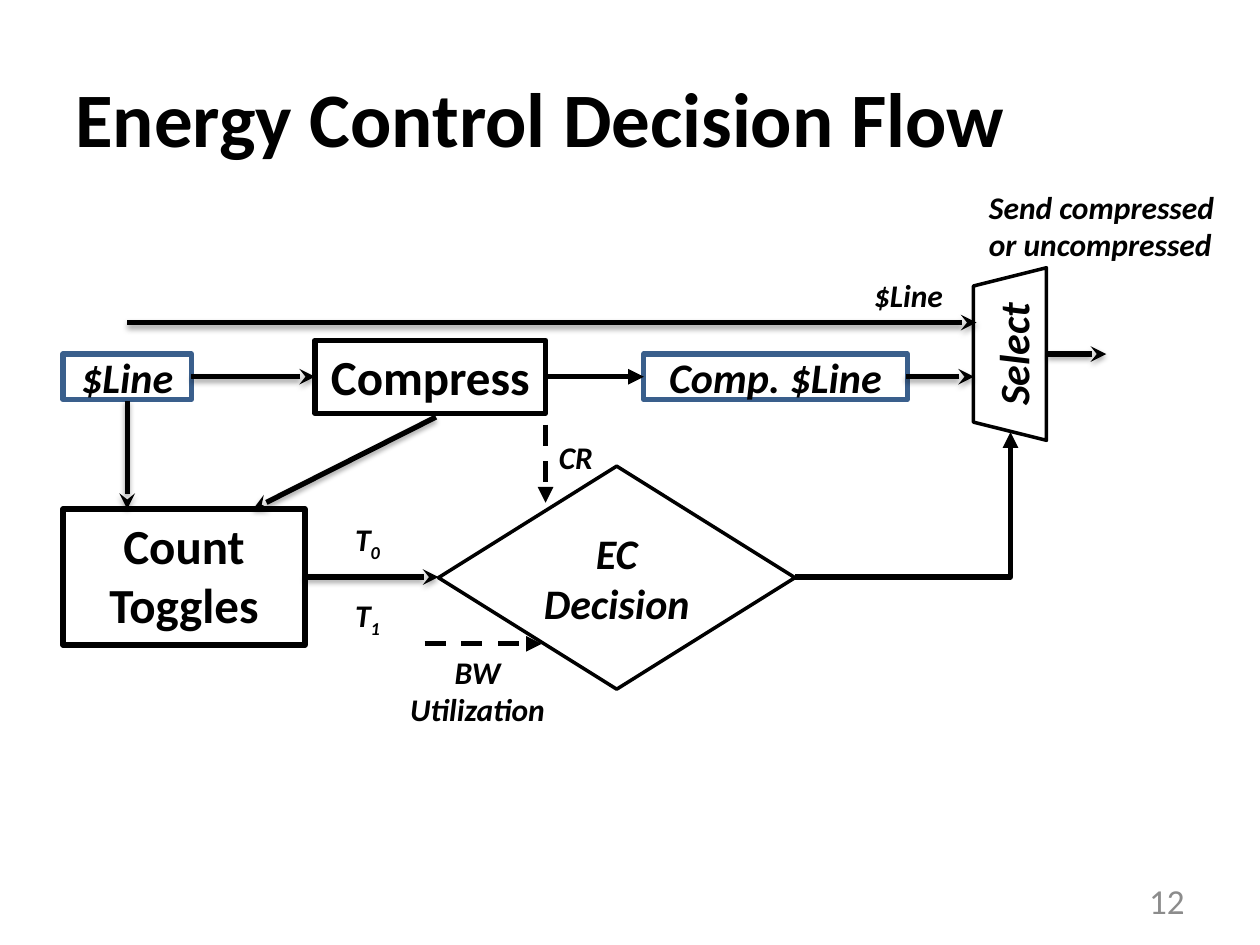
"""Build the energy control decision flow slide."""
from dataclasses import dataclass

from lxml import etree
from pptx import Presentation
from pptx import util as u
from pptx.dml.color import RGBColor
from pptx.enum import dml, shapes, text
from pptx.oxml import ns

COLORS = {"ink": "000000", "paper": "FFFFFF", "edge": "3A5F8C", "number": "8C8C8C"}
MIDDLE, TOP = text.MSO_ANCHOR.MIDDLE, text.MSO_ANCHOR.TOP
LEFT, CENTER, RIGHT = text.PP_ALIGN.LEFT, text.PP_ALIGN.CENTER, text.PP_ALIGN.RIGHT
RECT = shapes.MSO_SHAPE.RECTANGLE


@dataclass(frozen=True)
class Style:
    """Look of a piece of text."""
    size: int
    bold: bool = True
    italic: bool = False
    color: str = "ink"
    align: text.PP_ALIGN = CENTER
    anchor: text.MSO_ANCHOR = MIDDLE


TITLE = Style(44, align=LEFT)
NUMBER = Style(20, bold=False, color="number", align=RIGHT)
STEP = Style(28, anchor=TOP)
DATA = Style(24, italic=True)
LABEL = Style(18, italic=True, anchor=TOP)
LEFT_LABEL = Style(18, italic=True, align=LEFT, anchor=TOP)


@dataclass(frozen=True)
class Node:
    """Outlined shape with centred text."""
    lines: tuple[str, ...]
    box: tuple[float, float, float, float]
    style: Style = DATA
    kind: shapes.MSO_SHAPE = RECT
    fill: str | None = None
    edge: str = "ink"
    weight: float = 3
    rotation: float = 0


@dataclass(frozen=True)
class Label:
    """Free text, with an optional subscript after the last line."""
    lines: tuple[str, ...]
    box: tuple[float, float, float, float]
    style: Style = LABEL
    subscript: str = ""
    wrap: bool = False


@dataclass(frozen=True)
class Arrow:
    """Connector with a head at its end."""
    start: tuple[float, float]
    end: tuple[float, float]
    head: str = "stealth"
    dashed: bool = False
    bent: bool = False


NODES = [
    Node(("$Line",), (0.5, 2.81, 1.02, 0.36), edge="edge"),
    Node(("Compress",), (2.5, 2.7, 1.83, 0.58), STEP, fill="paper"),
    Node(("Comp. $Line",), (5.11, 2.81, 2.09, 0.36), edge="edge"),
    Node(("Count Toggles",), (0.5, 4.04, 1.92, 1.08), STEP, fill="paper"),
    Node(("Select",), (7.33, 2.52, 1.37, 0.58), kind=shapes.MSO_SHAPE.TRAPEZOID,
         weight=2, rotation=270),
    Node(("EC", "Decision"), (3.48, 3.7, 2.83, 1.77), kind=shapes.MSO_SHAPE.DIAMOND, weight=2),
]
ARROWS = [
    Arrow((1.52, 2.99), (2.5, 2.99)),
    Arrow((4.33, 2.99), (5.11, 2.99), "triangle"),
    Arrow((7.19, 2.99), (7.73, 2.99)),
    Arrow((1.01, 3.18), (1.01, 4.04)),
    Arrow((1.01, 2.56), (7.75, 2.56)),
    Arrow((3.46, 3.31), (2.01, 4.04)),
    Arrow((2.42, 4.58), (3.48, 4.58)),
    Arrow((8.31, 2.81), (8.78, 2.81)),
    Arrow((3.37, 5.11), (4.3, 5.11), "triangle", dashed=True),
    Arrow((4.33, 3.37), (4.33, 3.99), "triangle", dashed=True),
    Arrow((6.31, 4.58), (8.02, 3.43), "triangle", bent=True),
]
LABELS = [
    Label(("Energy Control Decision Flow",), (0.5, 0.3, 9, 1.25), TITLE, wrap=True),
    Label(("12",), (7.17, 6.95, 2.33, 0.4), NUMBER, wrap=True),
    Label(("T",), (2.72, 4.08, 0.41, 0.4), LEFT_LABEL, "0"),
    Label(("T",), (2.72, 4.68, 0.41, 0.4), LEFT_LABEL, "1"),
    Label(("BW", "Utilization"), (3.15, 5.13, 1.28, 0.71)),
    Label(("CR",), (4.33, 3.43, 0.48, 0.4)),
    Label(("$Line",), (6.83, 2.14, 0.76, 0.4)),
    Label(("Send compressed", "or uncompressed"), (7.75, 1.44, 2.01, 0.71), LEFT_LABEL),
]


def rgb(name: str) -> RGBColor:
    return RGBColor.from_string(COLORS[name])


def add_run(p, words: str, style: Style):
    r = p.add_run()
    r.text = words
    r.font.name, r.font.size = "Calibri", u.Pt(style.size)
    r.font.bold, r.font.italic = style.bold, style.italic
    r.font.color.rgb = rgb(style.color)
    return r


def write(tf, lines: tuple[str, ...], style: Style) -> None:
    tf.vertical_anchor = style.anchor
    for i, line in enumerate(lines):
        p = tf.add_paragraph() if i else tf.paragraphs[0]
        p.alignment = style.align
        add_run(p, line, style)


def draw_node(s, node: Node) -> None:
    sp = s.shapes.add_shape(node.kind, *map(u.Inches, node.box))
    sp.shadow.inherit = False
    sp.rotation = node.rotation
    if node.fill:
        sp.fill.solid()
        sp.fill.fore_color.rgb = rgb(node.fill)
    else:
        sp.fill.background()
    sp.line.color.rgb, sp.line.width = rgb(node.edge), u.Pt(node.weight)
    write(sp.text_frame, node.lines, node.style)


def draw_label(s, label: Label) -> None:
    tf = s.shapes.add_textbox(*map(u.Inches, label.box)).text_frame
    tf.word_wrap = label.wrap
    if not label.wrap:
        tf.auto_size = text.MSO_AUTO_SIZE.SHAPE_TO_FIT_TEXT
    write(tf, label.lines, label.style)
    if label.subscript:
        r = add_run(tf.paragraphs[-1], label.subscript, label.style)
        r._r.get_or_add_rPr().set("baseline", "-25000")


def draw_arrow(s, arrow: Arrow) -> None:
    kind = shapes.MSO_CONNECTOR.ELBOW if arrow.bent else shapes.MSO_CONNECTOR.STRAIGHT
    sp = s.shapes.add_connector(kind, *map(u.Inches, arrow.start + arrow.end))
    sp.line.color.rgb, sp.line.width = rgb("ink"), u.Pt(3)
    if arrow.dashed:
        sp.line.dash_style = dml.MSO_LINE.DASH
    spPr = sp._element.spPr
    if arrow.bent:
        spPr.find(ns.qn("a:prstGeom")).set("prst", "bentConnector2")
    etree.SubElement(spPr.find(ns.qn("a:ln")), ns.qn("a:tailEnd"), type=arrow.head)
    effects = etree.SubElement(spPr, ns.qn("a:effectLst"))
    if arrow.head == "stealth":
        shadow = etree.SubElement(effects, ns.qn("a:outerShdw"), blurRad=str(u.Pt(3.1)),
                                  dist=str(u.Pt(1.8)), dir="5400000", rotWithShape="0")
        color = etree.SubElement(shadow, ns.qn("a:srgbClr"), val=COLORS["ink"])
        etree.SubElement(color, ns.qn("a:alpha"), val="35000")


def main() -> None:
    prs = Presentation()
    prs.slide_width, prs.slide_height = u.Inches(10), u.Inches(7.5)
    s = prs.slides.add_slide(prs.slide_layouts[6])
    for items, draw in ((NODES, draw_node), (ARROWS, draw_arrow), (LABELS, draw_label)):
        for item in items:
            draw(s, item)
    prs.save("out.pptx")


if __name__ == "__main__":
    main()
